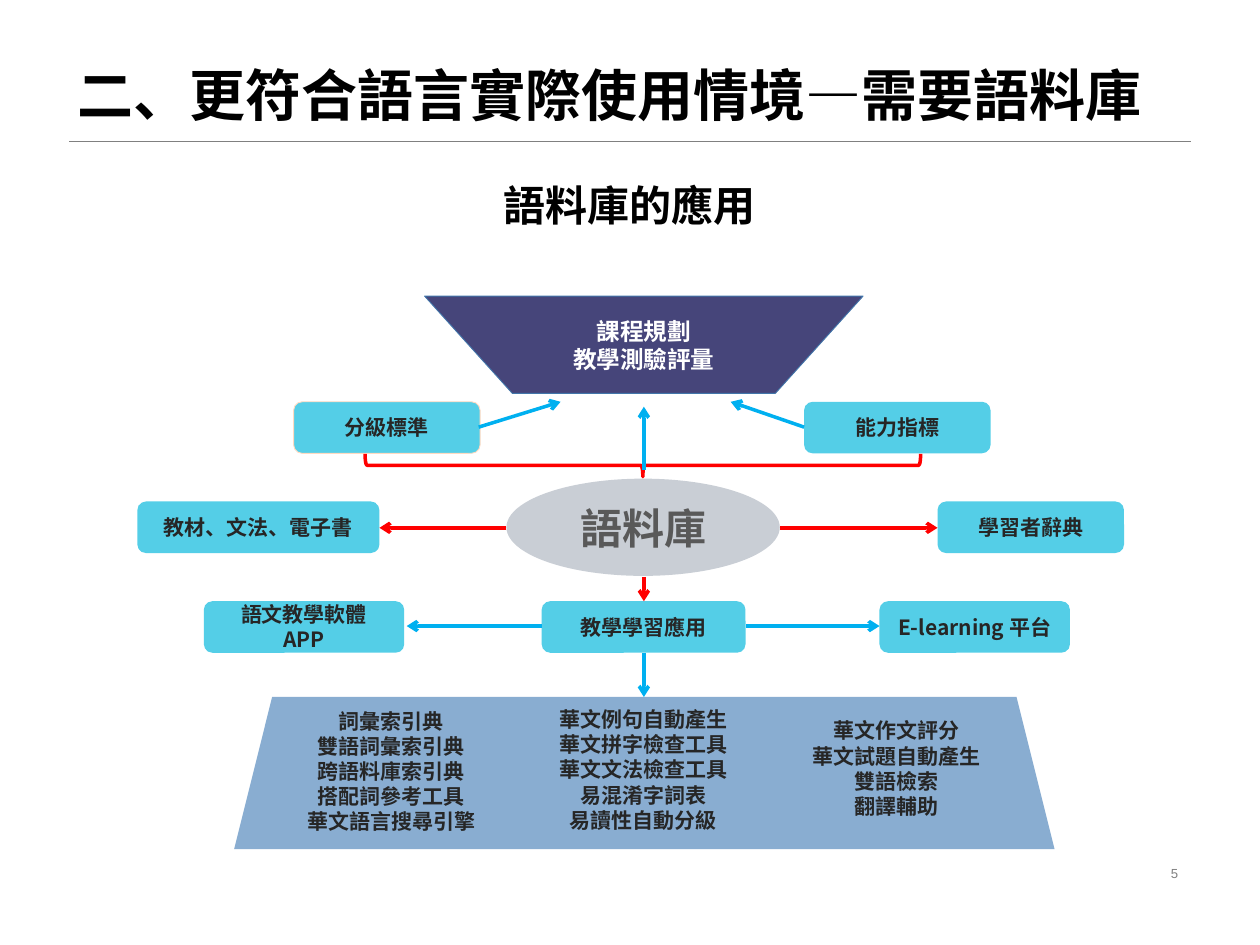
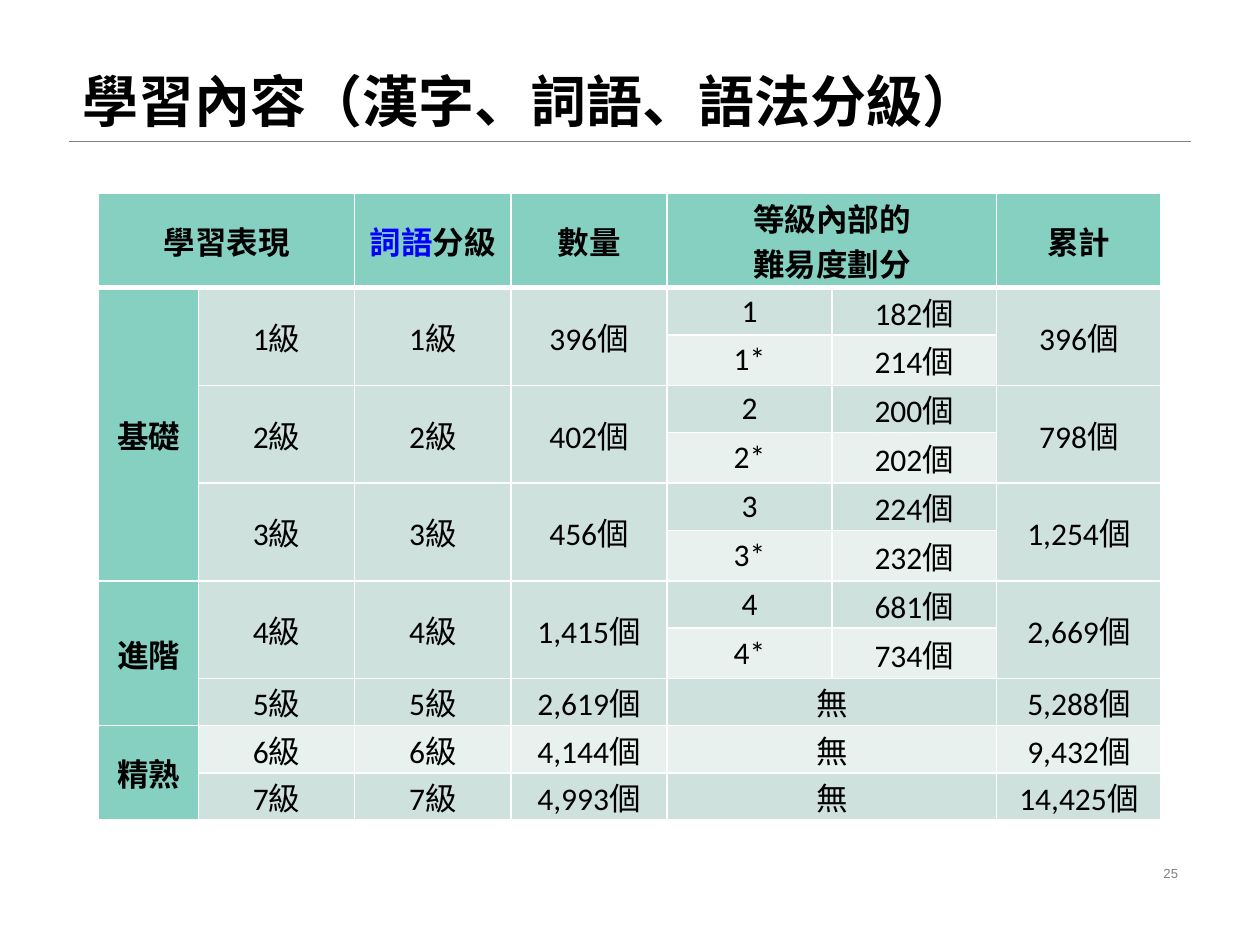
import pptx
import pptx.util
import pptx.dml.color
import pptx.enum.shapes
import pptx.enum.text
import pptx.oxml.ns
import lxml.etree

Cm = pptx.util.Cm
Pt = pptx.util.Pt
Shape = pptx.enum.shapes.MSO_SHAPE
Align = pptx.enum.text.PP_ALIGN
Anchor = pptx.enum.text.MSO_ANCHOR
qn = pptx.oxml.ns.qn

NOTO = "Noto Sans CJK SC"
BLACK, WHITE, GRAY, DARK = "000000", "FFFFFF", "808080", "262626"
RED, BLUE, CYAN = "FF0000", "00B0F0", "54CEE7"
TEAL, BANDS = "86D0C2", ("E8F1EE", "CFE1DC")

LABELS = [
    ("分級標準", 5.92, 0, 3.76, "FFDAC1"),
    ("能力指標", 16.21, 0, 3.76, None),
    ("教材、文法、電子書", 2.77, 1, 4.88, None),
    ("學習者辭典", 18.9, 1, 3.76, None),
    ("教學學習應用", 10.92, 2, 4.11, None),
    ("語文教學軟體 APP", 4.11, 2, 4.04, None),
    ("E-learning 平台", 17.73, 2, 3.84, None),
]
ARROWS = [
    (RED, 10.21, 10.64, 7.65, 10.64),
    (RED, 15.72, 10.64, 18.9, 10.64),
    (RED, 12.98, 11.63, 12.98, 12.12),
    (BLUE, 9.65, 8.61, 11.3, 8.1),
    (BLUE, 16.21, 8.61, 14.73, 8.1),
    (BLUE, 12.98, 9.47, 12.98, 8.2),
    (BLUE, 12.98, 13.16, 12.98, 14.05),
    (BLUE, 10.92, 12.62, 8.2, 12.62),
    (BLUE, 15.04, 12.62, 17.73, 12.62),
]
TOOLS = [
    (5.92, 14.15, 2.82, "詞彙索引典\n雙語詞彙索引典\n跨語料庫索引典\n搭配詞參考工具\n華文語言搜尋引擎"),
    (11, 14.12, 2.82, "華文例句自動產生\n華文拼字檢查工具\n華文文法檢查工具\n易混淆字詞表\n易讀性自動分級"),
    (16.1, 14.35, 2.31, "華文作文評分\n華文試題自動產生\n雙語檢索\n翻譯輔助"),
]
STAGES = [("基礎", 1, 6), ("進階", 7, 3), ("精熟", 10, 2)]
LEVELS = [
    ("396", ("182", "214"), "396"),
    ("402", ("200", "202"), "798"),
    ("456", ("224", "232"), "1,254"),
    ("1,415", ("681", "734"), "2,669"),
    ("2,619", (), "5,288"),
    ("4,144", (), "9,432"),
    ("4,993", (), "14,425"),
]


def tint(code):
    return pptx.dml.color.RGBColor.from_string(code)


def write(frame, text, size, color=BLACK, bold=True, align=Align.CENTER, name=NOTO):
    frame.text = text
    for para in frame.paragraphs:
        para.alignment = align
        font = para.font
        font.name, font.size, font.bold = name, Pt(size), bold
        font.color.rgb = tint(color)
        props = para._p.pPr.find(qn("a:defRPr"))
        lxml.etree.SubElement(props, qn("a:ea")).set("typeface", NOTO)


def add_line(slide, color, width, x1, y1, x2, y2, arrow=False):
    kind = pptx.enum.shapes.MSO_CONNECTOR.STRAIGHT
    line = slide.shapes.add_connector(kind, Cm(x1), Cm(y1), Cm(x2), Cm(y2))
    line.line.color.rgb = tint(color)
    line.line.width = Pt(width)
    if arrow:
        ln = line.line._get_or_add_ln()
        lxml.etree.SubElement(ln, qn("a:tailEnd")).set("type", "arrow")
    lxml.etree.SubElement(line._element.spPr, qn("a:effectLst"))


def add_form(slide, kind, x, y, w, h, fill=None, edge=None, width=0.5):
    form = slide.shapes.add_shape(kind, Cm(x), Cm(y), Cm(w), Cm(h))
    form.shadow.inherit = False
    if fill:
        form.fill.solid()
        form.fill.fore_color.rgb = tint(fill)
    else:
        form.fill.background()
    if edge:
        form.line.color.rgb = tint(edge)
        form.line.width = Pt(width)
    else:
        form.line.fill.background()
    form.text_frame.vertical_anchor = Anchor.MIDDLE
    return form


def add_text(slide, text, x, y, w, h, size, **style):
    frame = slide.shapes.add_textbox(Cm(x), Cm(y), Cm(w), Cm(h)).text_frame
    write(frame, text, size, **style)
    return frame


def add_page(deck, title, number, x, y, w, h, name=NOTO):
    slide = deck.slides.add_slide(deck.slide_layouts[5])
    add_line(slide, GRAY, 0.25, 1.4, 2.84, 24, 2.84)
    head = slide.shapes.title
    head.left, head.top, head.width, head.height = Cm(x), Cm(y), Cm(w), Cm(h)
    frame = head.text_frame
    frame.auto_size = pptx.enum.text.MSO_AUTO_SIZE.NONE
    frame.vertical_anchor = Anchor.BOTTOM
    write(frame, title, 32, align=Align.LEFT, name=name)
    frame.paragraphs[0].line_spacing = 0.9
    foot = add_text(slide, number, 17.93, 17.32, 6.07, 0.58, 7.5,
                    color=GRAY, bold=False, align=Align.RIGHT, name="Arial")
    foot.word_wrap = True
    foot.vertical_anchor = Anchor.MIDDLE
    return slide


def draw_uses(slide):
    add_text(slide, "語料庫的應用", 9.88, 3.5, 5.64, 1.27, 24)
    hub = add_form(slide, Shape.OVAL, 10.21, 9.65, 5.51, 1.96, "C9CED5")
    write(hub.text_frame, "語料庫", 24, "595959")
    for text, x, row, w, edge in LABELS:
        label = add_form(slide, Shape.ROUNDED_RECTANGLE, x, 8.1 + 2.01 * row, w, 1.04, CYAN, edge)
        write(label.text_frame, text, 12, DARK)
    brace = add_form(slide, Shape.LEFT_BRACE, 12.73, 3.78, 0.46, 11.2, edge=RED, width=2)
    brace.rotation = 270
    plan = add_form(slide, Shape.FLOWCHART_MANUAL_OPERATION, 8.56, 5.97, 8.84, 1.96, "46457A", "4276AA")
    write(plan.text_frame, "課程規劃\n教學測驗評量", 13.5, WHITE)
    add_form(slide, Shape.TRAPEZOID, 4.72, 14.05, 16.54, 3.07, "89ADD1")
    for x, y, h, text in TOOLS:
        add_text(slide, text, x, y, 3.94, h, 12, color=DARK)
    for color, *ends in ARROWS:
        add_line(slide, color, 2, *ends, arrow=True)


def style_cell(cell, row, col):
    props = cell._tc.get_or_add_tcPr()
    for side in "LRTB":
        thick = (row, side) in ((0, "B"), (1, "T"))
        ln = lxml.etree.SubElement(props, qn("a:ln" + side), w=str(Pt(3 if thick else 1)))
        fill = lxml.etree.SubElement(ln, qn("a:solidFill"))
        lxml.etree.SubElement(fill, qn("a:srgbClr")).set("val", WHITE)
    cell.fill.solid()
    cell.fill.fore_color.rgb = tint(TEAL if row == 0 or col == 0 else BANDS[row % 2])
    cell.margin_left = cell.margin_right = Cm(0.18)
    cell.margin_top = cell.margin_bottom = 0
    cell.vertical_anchor = Anchor.MIDDLE


def put(grid, row, col, text, down=1, wide=1, bold=False):
    cell = grid.cell(row, col)
    if down > 1 or wide > 1:
        cell.merge(grid.cell(row + down - 1, col + wide - 1))
    write(cell.text_frame, text, 18, bold=bold, name="Calibri")
    return cell


def draw_grid(slide):
    cols = [2.01] + [3.15] * 3 + [3.32] * 3
    rows = [1.91] + [0.95, 1.02] * 4 + [0.95] * 3
    grid = slide.shapes.add_table(len(rows), len(cols), Cm(1.99), Cm(3.89),
                                  Cm(sum(cols)), Cm(sum(rows))).table
    for col, width in enumerate(cols):
        grid.columns[col].width = Cm(width)
    for row, height in enumerate(rows):
        grid.rows[row].height = Cm(height)
        for col in range(len(cols)):
            style_cell(grid.cell(row, col), row, col)

    put(grid, 0, 0, "學習表現", wide=2, bold=True)
    para = put(grid, 0, 2, "詞語", bold=True).text_frame.paragraphs[0]
    para.runs[0].font.color.rgb = tint("0000FF")
    para.add_run().text = "分級"
    put(grid, 0, 3, "數量", bold=True)
    put(grid, 0, 4, "等級內部的\n難易度劃分", wide=2, bold=True)
    put(grid, 0, 6, "累計", bold=True)
    for stage, row, down in STAGES:
        put(grid, row, 0, stage, down, bold=True)

    row = 1
    for level, (count, parts, total) in enumerate(LEVELS, 1):
        down = len(parts) or 1
        for col, text in ((1, f"{level}級"), (2, f"{level}級"), (3, count + "個"), (6, total + "個")):
            put(grid, row, col, text, down)
        for step, part in enumerate(parts):
            put(grid, row + step, 4, f"{level}" + "*" * step)
            put(grid, row + step, 5, part + "個")
        if not parts:
            put(grid, row, 4, "無", wide=2)
        row += down


def main():
    deck = pptx.Presentation()
    deck.slide_width, deck.slide_height = Cm(25.4), Cm(19.05)
    draw_uses(add_page(deck, "二、更符合語言實際使用情境—需要語料庫", "5", 1.3, 0.41, 22.81, 2.31))
    draw_grid(add_page(deck, "學習內容（漢字、詞語、語法分級）", "25", 1.4, 0, 22.6, 2.84, "Arial"))
    deck.save("out.pptx")


if __name__ == "__main__":
    main()
